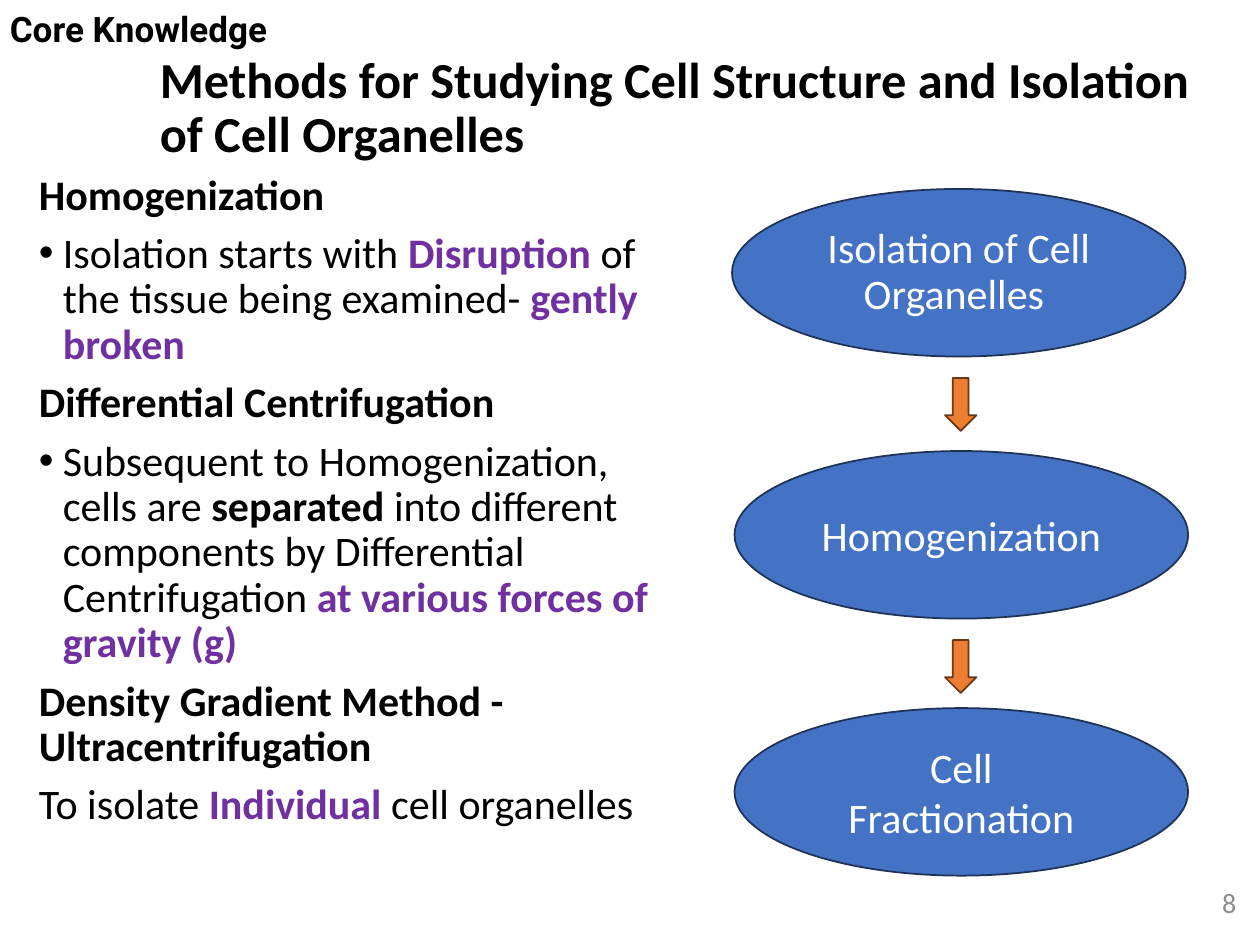
from dataclasses import dataclass

from lxml import etree
from pptx import Presentation
from pptx.dml.color import RGBColor
from pptx.enum.shapes import MSO_SHAPE
from pptx.enum.text import MSO_ANCHOR, PP_ALIGN
from pptx.oxml.ns import qn
from pptx.util import Inches, Pt

OVAL = MSO_SHAPE.OVAL
DOWN_ARROW = MSO_SHAPE.DOWN_ARROW
TOP, MIDDLE = MSO_ANCHOR.TOP, MSO_ANCHOR.MIDDLE
LEFT, CENTER, RIGHT = PP_ALIGN.LEFT, PP_ALIGN.CENTER, PP_ALIGN.RIGHT


@dataclass(frozen=True)
class Theme:
    font: str = "Calibri"
    label_font: str = "Roboto"
    text: str = "000000"
    accent: str = "7030A0"
    muted: str = "8C8C8C"
    step_text: str = "FFFFFF"
    step_fill: str = "4472C4"
    step_line: str = "1E3256"
    arrow_fill: str = "ED7D31"
    arrow_line: str = "683715"
    title_size: float = 28.8
    body_size: float = 24
    label_size: float = 20
    number_size: float = 16
    tight: float = 0.9


THEME = Theme()
PLAIN = (False, THEME.text)
STRONG = (True, THEME.text)
ACCENT = (True, THEME.accent)

METHODS = [
    (False, [("Homogenization", STRONG)]),
    (True, [
        ("Isolation starts with ", PLAIN),
        ("Disruption", ACCENT),
        (" of the tissue being examined- ", PLAIN),
        ("gently broken", ACCENT),
    ]),
    (False, [("Differential Centrifugation", STRONG)]),
    (True, [
        ("Subsequent to Homogenization, cells are ", PLAIN),
        ("separated", STRONG),
        (" into different components by Differential Centrifugation ", PLAIN),
        ("at various forces of gravity (g)", ACCENT),
    ]),
    (False, [("Density Gradient Method - Ultracentrifugation", STRONG)]),
    (False, [
        ("To isolate ", PLAIN),
        ("Individual", ACCENT),
        (" cell organelles", PLAIN),
    ]),
]

STEPS = [
    ("Isolation of Cell Organelles ", 5.81, 1.5, THEME.tight),
    ("Homogenization", 5.83, 3.58, 1.0),
    ("Cell Fractionation", 5.83, 5.62, 1.0),
]
ARROW_TOPS = [3, 5.08]


def style_font(font, size, color, bold=False, name=THEME.font):
    font.name = name
    font.size = Pt(size)
    font.bold = bold
    font.color.rgb = RGBColor.from_string(color)


def add_text_box(slide, box, anchor=MIDDLE):
    frame = slide.shapes.add_textbox(*map(Inches, box)).text_frame
    frame.word_wrap = True
    frame.vertical_anchor = anchor
    return frame


def write_line(frame, text, size, color, align=LEFT, spacing=1.0, **font_options):
    paragraph = frame.paragraphs[0]
    paragraph.text = text
    paragraph.alignment = align
    paragraph.line_spacing = spacing
    style_font(paragraph.font, size, color, **font_options)


def add_bullet(paragraph):
    properties = paragraph._p.get_or_add_pPr()
    properties.set("marL", str(Inches(0.19)))
    properties.set("indent", str(-Inches(0.19)))
    font = etree.SubElement(properties, qn("a:buFont"))
    font.set("typeface", "Arial")
    etree.SubElement(properties, qn("a:buChar")).set("char", "•")


def add_methods(slide):
    frame = add_text_box(slide, (0.21, 1.33, 5.29, 5.62), TOP)
    for index, (bulleted, runs) in enumerate(METHODS):
        paragraph = frame.add_paragraph() if index else frame.paragraphs[0]
        if bulleted:
            add_bullet(paragraph)
        paragraph.line_spacing = THEME.tight
        paragraph.space_before = Pt(7.5 if index else 0)
        style_font(paragraph.font, THEME.body_size, THEME.text)
        for text, (bold, color) in runs:
            run = paragraph.add_run()
            run.text = text
            run.font.bold = bold
            run.font.color.rgb = RGBColor.from_string(color)


def add_filled_shape(slide, kind, box, fill, line):
    shape = slide.shapes.add_shape(kind, *map(Inches, box))
    shape.shadow.inherit = False
    shape.fill.solid()
    shape.fill.fore_color.rgb = RGBColor.from_string(fill)
    shape.line.color.rgb = RGBColor.from_string(line)
    shape.line.width = Pt(1)
    return shape


def add_step(slide, text, left, top, spacing):
    shape = add_filled_shape(slide, OVAL, (left, top, 3.6, 1.33),
                             THEME.step_fill, THEME.step_line)
    frame = shape.text_frame
    frame.word_wrap = True
    frame.vertical_anchor = MIDDLE
    write_line(frame, text, THEME.body_size, THEME.step_text, CENTER, spacing)


def add_section_label(slide):
    frame = add_text_box(slide, (-0.25, 0, 2.7, 0.5))
    frame.margin_left = frame.margin_right = Inches(0.05)
    write_line(frame, "Core Knowledge", THEME.label_size, THEME.text, CENTER,
               THEME.tight, bold=True, name=THEME.label_font)


def main():
    presentation = Presentation()
    presentation.slide_width = Inches(10)
    presentation.slide_height = Inches(7.5)
    slide = presentation.slides.add_slide(presentation.slide_layouts[6])

    title = add_text_box(slide, (1.17, 0.4, 8.62, 0.93))
    write_line(title, "Methods for Studying Cell Structure and Isolation of Cell Organelles",
               THEME.title_size, THEME.text, spacing=THEME.tight, bold=True)
    add_methods(slide)
    number = add_text_box(slide, (9.31, 6.83, 0.6, 0.67))
    write_line(number, "8", THEME.number_size, THEME.muted, RIGHT)
    add_section_label(slide)
    for step in STEPS:
        add_step(slide, *step)
    for top in ARROW_TOPS:
        add_filled_shape(slide, DOWN_ARROW, (7.5, top, 0.25, 0.42),
                         THEME.arrow_fill, THEME.arrow_line)
    presentation.save("out.pptx")


if __name__ == "__main__":
    main()
